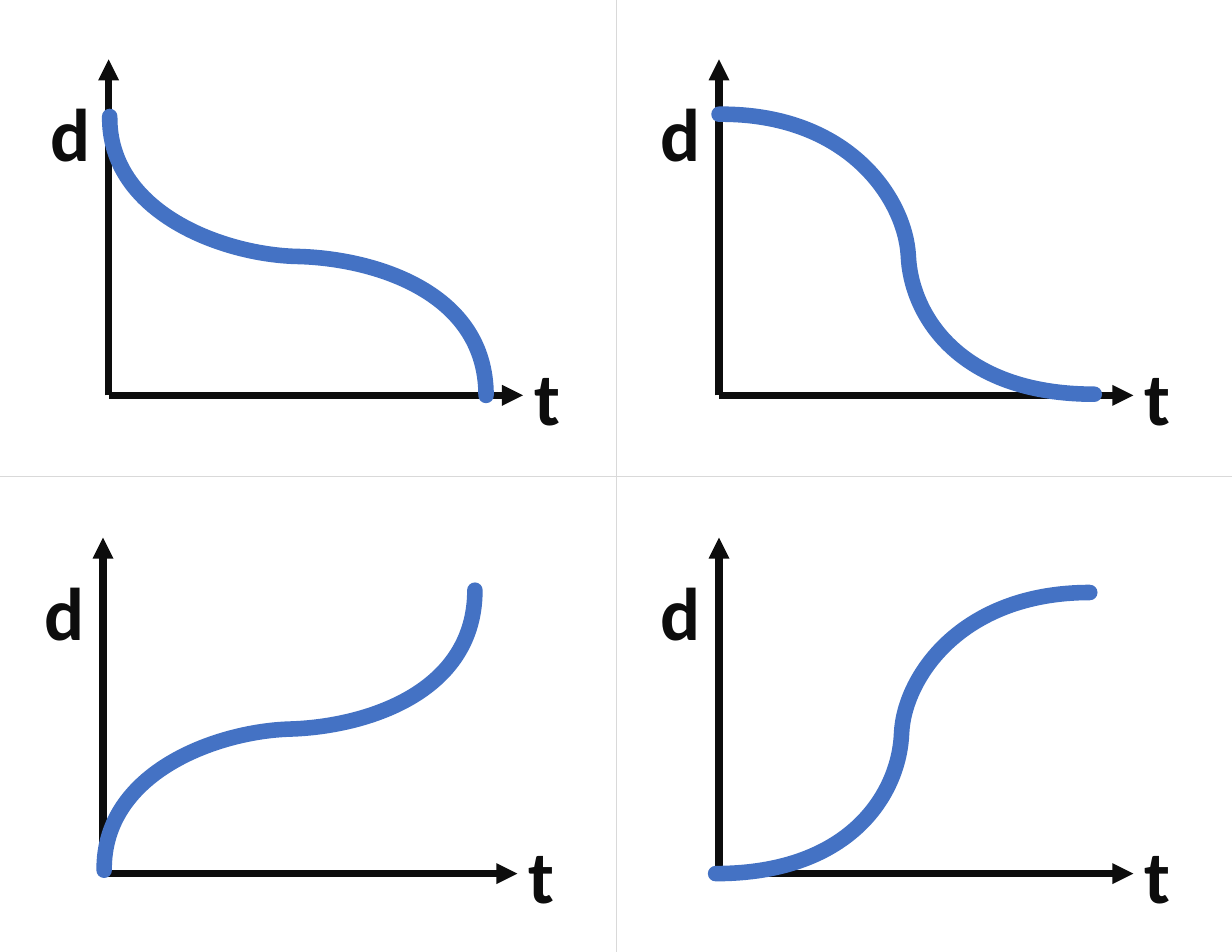
"""Build a slide with four distance-time graphs, one in each quarter."""
from lxml import etree
from pptx import Presentation
from pptx.dml.color import RGBColor
from pptx.enum import shapes, text
from pptx.oxml import ns
from pptx.util import Inches, Pt

BLACK = RGBColor(0x0D, 0x0D, 0x0D)
GREY = RGBColor(0xD9, 0xD9, 0xD9)
BLUE = RGBColor(0x44, 0x72, 0xC4)

AXIS_HEIGHT, AXIS_WIDTH = 3, 3.7
ORIGINS = [(0.97, 3.53), (6.42, 3.53), (0.92, 7.8), (6.42, 7.8)]
CURVES = [
    [(0.98, 1.04), (0.97, 1.9), (2, 2.28), (2.67, 2.29),
     (3.35, 2.31), (4.34, 2.61), (4.34, 3.53)],
    [(0.93, 7.77), (0.92, 6.9), (1.93, 6.53), (2.59, 6.51),
     (3.26, 6.49), (4.24, 6.19), (4.24, 5.27)],
    [(6.42, 1.02), (7.58, 1.01), (8.08, 1.78), (8.11, 2.28),
     (8.13, 2.79), (8.54, 3.52), (9.77, 3.52)],
    [(9.73, 5.29), (8.57, 5.29), (8.07, 6.06), (8.05, 6.55),
     (8.03, 7.06), (7.62, 7.8), (6.39, 7.8)],
]

presentation = Presentation()
presentation.slide_width = Inches(11)
presentation.slide_height = Inches(8.5)
slide = presentation.slides.add_slide(presentation.slide_layouts[6])


def add_line(start, end, color, width, arrow=False):
    points = [Inches(value) for value in (*start, *end)]
    line = slide.shapes.add_connector(shapes.MSO_CONNECTOR.STRAIGHT, *points)
    line.line.color.rgb = color
    line.line.width = Pt(width)
    if arrow:
        outline = line.line._get_or_add_ln()
        etree.SubElement(outline, ns.qn("a:tailEnd"), type="triangle")
    etree.SubElement(line._element.spPr, ns.qn("a:effectLst"))


def add_label(letter, left, top, width):
    box = slide.shapes.add_textbox(
        Inches(left), Inches(top), Inches(width), Inches(0.91))
    frame = box.text_frame
    frame.text = letter
    frame.word_wrap = False
    frame.auto_size = text.MSO_AUTO_SIZE.SHAPE_TO_FIT_TEXT
    font = frame.paragraphs[0].runs[0].font
    font.name = "Calibri"
    font.size = Pt(48)
    font.bold = True
    font.color.rgb = BLACK


add_line((0, 4.25), (11, 4.25), GREY, 0.5)
add_line((5.5, 8.5), (5.5, 0), GREY, 0.5)

for x, y in ORIGINS:
    add_line((x, y), (x, y - AXIS_HEIGHT), BLACK, 4.5, arrow=True)
    add_line((x, y), (x + AXIS_WIDTH, y), BLACK, 4.5, arrow=True)
    add_label("d", x - 0.62, y - 2.8, 0.62)
    add_label("t", x + AXIS_WIDTH, y - 0.45, 0.46)

for curve in CURVES:
    points = [(Inches(x), Inches(y)) for x, y in curve]
    builder = slide.shapes.build_freeform(*points[0])
    builder.add_line_segments(points[1:], close=False)
    shape = builder.convert_to_shape()
    shape.shadow.inherit = False
    shape.fill.background()
    shape.line.color.rgb = BLUE
    shape.line.width = Pt(10)
    shape.line._get_or_add_ln().set("cap", "rnd")
    segments = list(shape._element.iter(ns.qn("a:lnTo")))
    outline_path = segments[0].getparent()
    for first in range(0, len(segments), 3):
        bezier = etree.SubElement(outline_path, ns.qn("a:cubicBezTo"))
        for segment in segments[first:first + 3]:
            bezier.append(segment[0])
            outline_path.remove(segment)

presentation.save("out.pptx")
